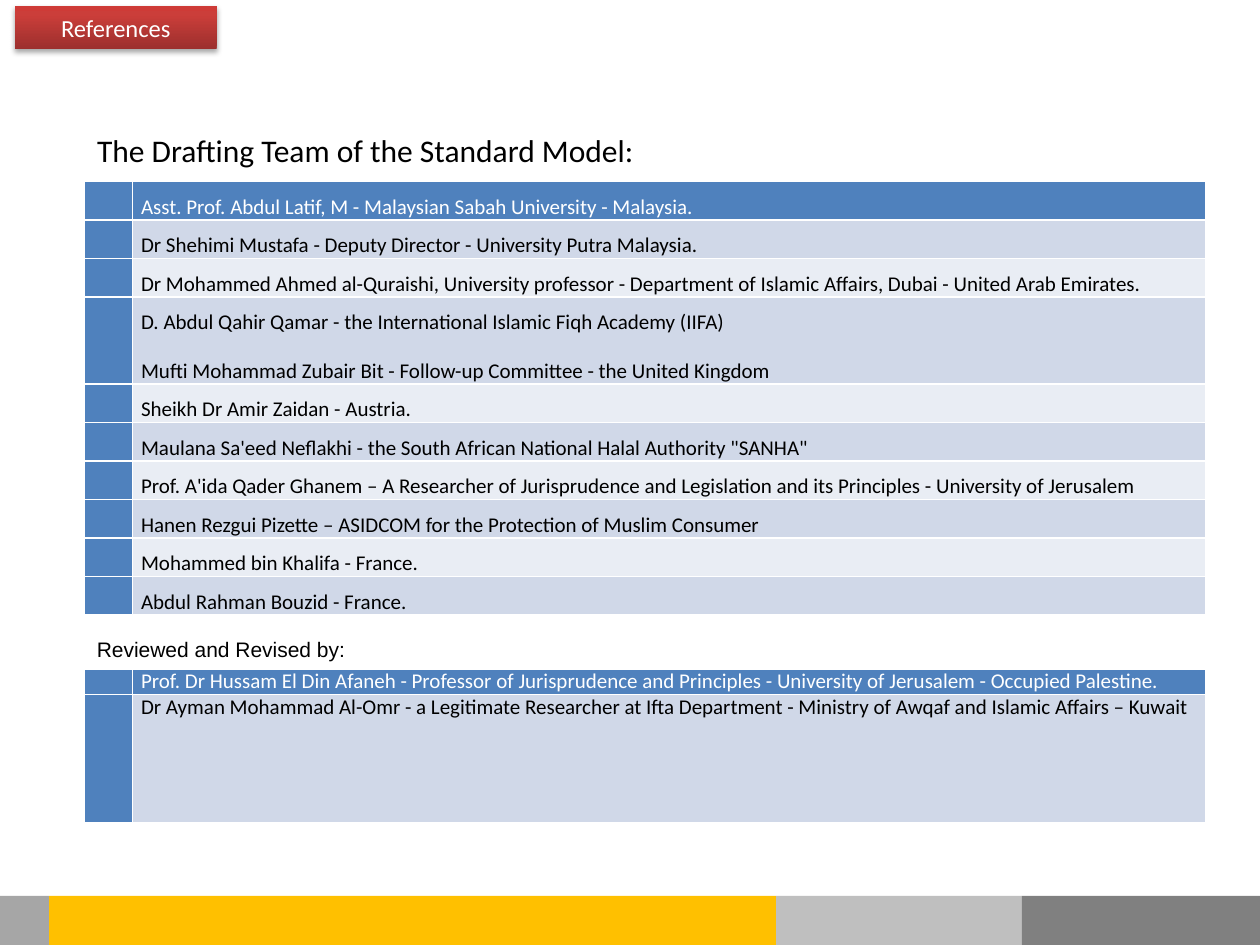
import copy

import pptx
import pptx.dml.color
import pptx.enum.shapes
import pptx.enum.text
import pptx.oxml
import pptx.oxml.ns
import pptx.util

Inches, Pt = pptx.util.Inches, pptx.util.Pt
ALIGN = pptx.enum.text.PP_ALIGN
ANCHOR = pptx.enum.text.MSO_ANCHOR
NS = pptx.oxml.ns.nsdecls("a")

# Content: one entry per table row, each a list of paragraphs
SECTION = "References"
TEAM_TITLE = "The Drafting Team of the Standard Model:"
REVIEW_TITLE = "Reviewed and Revised by:"
TEAM = [
    ["Asst. Prof. Abdul Latif, M - Malaysian Sabah University - Malaysia."],
    ["Dr Shehimi Mustafa - Deputy Director - University Putra Malaysia."],
    ["Dr Mohammed Ahmed al-Quraishi, University professor - Department of Islamic Affairs, "
     "Dubai - United Arab Emirates."],
    ["D. Abdul Qahir Qamar - the International Islamic Fiqh Academy (IIFA)",
     "Mufti Mohammad Zubair Bit - Follow-up Committee - the United Kingdom"],
    ["Sheikh Dr Amir Zaidan - Austria."],
    ["Maulana Sa'eed Neflakhi - the South African National Halal Authority \"SANHA\""],
    ["Prof. A'ida Qader Ghanem – A Researcher of Jurisprudence and Legislation and its "
     "Principles - University of Jerusalem"],
    ["Hanen Rezgui Pizette – ASIDCOM for the Protection of Muslim Consumer"],
    ["Mohammed bin Khalifa - France."],
    ["Abdul Rahman Bouzid - France."],
]
REVIEWERS = [
    ["Prof. Dr Hussam El Din Afaneh - Professor of Jurisprudence and Principles - "
     "University of Jerusalem - Occupied Palestine."],
    ["Dr Ayman Mohammad Al-Omr - a Legitimate Researcher at Ifta Department - "
     "Ministry of Awqaf and Islamic Affairs – Kuwait"],
]
# Footer segments: left edge, right edge, colour
FOOTER = [(0, 0.39, "A6A6A6"), (0.39, 6.16, "FFC000"),
          (6.16, 8.11, "BFBFBF"), (8.11, 10, "808080")]

LEFT, COLUMNS = 0.67, (0.38, 8.52)
HEADING_WIDTH = 5.67
BLUE, BANDS = "4F81BD", ("E9EDF4", "D0D8E8")


def color(value):
    return pptx.dml.color.RGBColor.from_string(value)


def style(paragraph, size, ink="000000", face="Calibri", align=ALIGN.LEFT):
    paragraph.alignment = align
    font = paragraph.font
    font.size, font.name, font.bold = Pt(size), face, False
    font.color.rgb = color(ink)


def box(left, top, width, height):
    return [Inches(v) for v in (left, top, width, height)]


def add_rectangle(*place):
    rectangle = slide.shapes.add_shape(
        pptx.enum.shapes.MSO_SHAPE.RECTANGLE, *box(*place))
    rectangle.shadow.inherit = False
    rectangle.line.fill.background()
    return rectangle


def paint_cell(cell, fill):
    cell.margin_left = cell.margin_right = Inches(0.07)
    cell.margin_top = cell.margin_bottom = 0
    properties = cell._tc.get_or_add_tcPr()
    for side in ("lnL", "lnR", "lnT", "lnB"):
        properties.append(pptx.oxml.parse_xml(
            f'<a:{side} {NS} w="12700"><a:solidFill><a:srgbClr val="FFFFFF"/>'
            f'</a:solidFill></a:{side}>'))
    cell.fill.solid()
    cell.fill.fore_color.rgb = color(fill)


def add_people(people, top, heights, spacing, before):
    table = slide.shapes.add_table(
        len(people), 2, *box(LEFT, top, sum(COLUMNS), sum(heights))).table
    table.first_row = table.horz_banding = False
    for column, width in zip(table.columns, COLUMNS):
        column.width = Inches(width)
    for i, (lines, height) in enumerate(zip(people, heights)):
        table.rows[i].height = Inches(height)
        marker, person = table.cell(i, 0), table.cell(i, 1)
        paint_cell(marker, BLUE)
        # An empty cell takes its line height from the end-of-paragraph size
        marker.text_frame.paragraphs[0]._p.append(
            pptx.oxml.parse_xml(f'<a:endParaRPr {NS} sz="1200"/>'))
        paint_cell(person, BANDS[i % 2] if i else BLUE)
        person.text_frame.text = "\n".join(lines)
        for paragraph in person.text_frame.paragraphs:
            style(paragraph, 12, "000000" if i else "FFFFFF", align=ALIGN.JUSTIFY)
            paragraph.line_spacing = spacing
            paragraph.space_before = Pt(before)


presentation = pptx.Presentation()
presentation.slide_width, presentation.slide_height = Inches(10), Inches(7.5)
slide = presentation.slides.add_slide(presentation.slide_layouts[5])

# Drafting team
title = slide.shapes.title
title.left, title.top, title.width, title.height = box(LEFT, 0.99, HEADING_WIDTH, 0.4)
title.text_frame.text = TEAM_TITLE
title.text_frame.vertical_anchor = ANCHOR.TOP
style(title.text_frame.paragraphs[0], 18)
add_people(TEAM, 1.44, [0.3 if len(lines) == 1 else 0.69 for lines in TEAM], 1.5, 6)

# Reviewers
review = slide.shapes.add_textbox(*box(LEFT, 5, HEADING_WIDTH, 0.3)).text_frame
review.word_wrap = True
review.vertical_anchor = ANCHOR.MIDDLE
review.text = REVIEW_TITLE
style(review.paragraphs[0], 12, face="Arial")
add_people(REVIEWERS, 5.31, [0.2, 1.02], 1, 0)

# Section label with red gradient and soft shadow
label = add_rectangle(0.12, 0.05, 1.6, 0.34)
label.fill.gradient()
label.fill.gradient_angle = 90
first_stop = label.fill.gradient_stops[0]._gs
first_stop.addnext(copy.deepcopy(first_stop))
for stop, (position, shade) in zip(label.fill.gradient_stops, [
        (0, "9C2F2D"), (0.8, "CB3E3A"), (1, "CE3B37")]):
    stop.position = position
    stop.color.rgb = color(shade)
effects = label._element.spPr.find(pptx.oxml.ns.qn("a:effectLst"))
effects.append(pptx.oxml.parse_xml(
    f'<a:outerShdw {NS} blurRad="39370" dist="22860" dir="5400000" rotWithShape="0">'
    '<a:srgbClr val="000000"><a:alpha val="35000"/></a:srgbClr></a:outerShdw>'))
label.text_frame.text = SECTION
style(label.text_frame.paragraphs[0], 14, "FFFFFF", align=ALIGN.CENTER)

# Footer bar
for start, end, shade in FOOTER:
    segment = add_rectangle(start, 7.11, end - start, 0.39)
    segment.fill.solid()
    segment.fill.fore_color.rgb = color(shade)

presentation.save("out.pptx")
